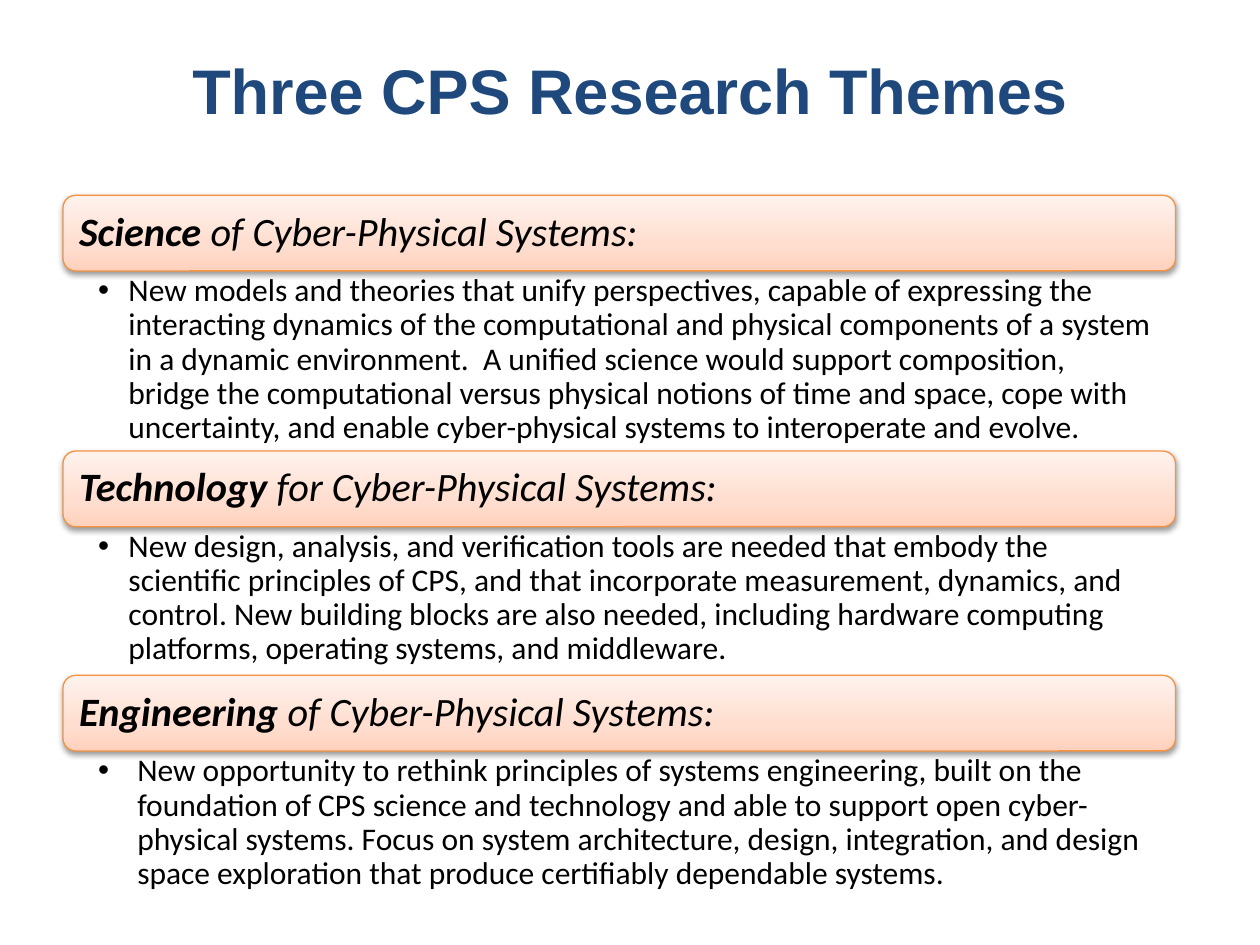
from lxml import etree
from pptx import Presentation
from pptx import util as u
from pptx.dml.color import RGBColor
from pptx.enum import shapes, text
from pptx.oxml.ns import qn

COLORS = {
    "title": "1F497D",
    "text": "000000",
    "border": "F69240",
    "shadow": "000000",
    "deep": "FFD2BD",
    "middle": "FFDED0",
    "pale": "FFF2ED",
}
GRADIENT = [(0, "deep"), (35, "middle"), (100, "pale")]
THEMES = [
    ("Science", " of Cyber-Physical Systems:", 19.07, 0.24,
     "New models and theories that unify perspectives, capable of expressing the "
     "interacting dynamics of the computational and physical components of a system "
     "in a dynamic environment.  A unified science would support composition, "
     "bridge the computational versus physical notions of time and space, cope with "
     "uncertainty, and enable cyber-physical systems to interoperate and evolve."),
    ("Technology", " for Cyber-Physical Systems:", 15.73, 0.24,
     "New design, analysis, and verification tools are needed that embody the "
     "scientific principles of CPS, and that incorporate measurement, dynamics, and "
     "control. New building blocks are also needed, including hardware computing "
     "platforms, operating systems, and middleware."),
    ("Engineering ", "of Cyber-Physical Systems:", 15.73, 0.31,
     "New opportunity to rethink principles of systems engineering, built on the "
     "foundation of CPS science and technology and able to support open "
     "cyber-physical systems. Focus on system architecture, design, integration, and "
     "design space exploration that produce certifiably dependable systems."),
]


def add_color(parent, name, alpha=None):
    color = etree.SubElement(parent, qn("a:srgbClr"), val=COLORS[name])
    if alpha:
        etree.SubElement(color, qn("a:alpha"), val=str(alpha * 1000))


def format_run(run, size, name, color, bold=False, italic=False):
    run.font.size = u.Pt(size)
    run.font.name = name
    run.font.color.rgb = RGBColor.from_string(COLORS[color])
    run.font.bold = bold
    run.font.italic = italic


presentation = Presentation()
presentation.slide_width = u.Inches(10)
presentation.slide_height = u.Inches(7.5)
column = presentation.slide_width / 100
row = presentation.slide_height / 100
slide = presentation.slides.add_slide(presentation.slide_layouts[5])

title = slide.shapes.title
title.left, title.top = int(5 * column), int(1.07 * row)
title.width, title.height = int(90 * column), int(16.67 * row)
title.text_frame.text = "Three CPS Research Themes"
title.text_frame.vertical_anchor = text.MSO_ANCHOR.MIDDLE
paragraph = title.text_frame.paragraphs[0]
paragraph.alignment = text.PP_ALIGN.CENTER
format_run(paragraph.runs[0], 36, "Arial", "title", bold=True)

left, width = int(5 * column), int(88.3 * column)
band_rows = 8
top = 20.67
for keyword, subject, detail_rows, indent, detail in THEMES:
    band = slide.shapes.add_shape(
        shapes.MSO_SHAPE.ROUNDED_RECTANGLE, left, int(top * row), width, int(band_rows * row))
    band.fill.gradient()
    band.fill.gradient_angle = 90
    properties = band._element.spPr
    stops = properties.find(".//" + qn("a:gsLst"))
    for stop in list(stops):
        stops.remove(stop)
    for position, name in GRADIENT:
        add_color(etree.SubElement(stops, qn("a:gs"), pos=str(position * 1000)), name)
    band.line.color.rgb = RGBColor.from_string(COLORS["border"])
    band.line.width = u.Pt(0.75)
    band.shadow.inherit = False
    shadow = etree.SubElement(
        properties.find(qn("a:effectLst")), qn("a:outerShdw"), blurRad=str(u.Pt(3.1)),
        dist=str(u.Pt(1.6)), dir="5400000", rotWithShape="0")
    add_color(shadow, "shadow", 38)

    frame = band.text_frame
    frame.word_wrap = True
    frame.vertical_anchor = text.MSO_ANCHOR.MIDDLE
    frame.margin_left = frame.margin_right = u.Inches(0.1)
    paragraph = frame.paragraphs[0]
    paragraph.alignment = text.PP_ALIGN.LEFT
    paragraph.line_spacing = 0.9
    for words, bold in ((keyword, True), (subject, False)):
        run = paragraph.add_run()
        run.text = words
        format_run(run, 23, "Calibri", "text", bold=bold, italic=True)
    top += band_rows

    box = slide.shapes.add_textbox(left, int(top * row), width, int(detail_rows * row))
    frame = box.text_frame
    frame.word_wrap = True
    frame.margin_left, frame.margin_right = u.Inches(0.28), u.Inches(0.18)
    frame.margin_top = frame.margin_bottom = u.Inches(0.03)
    frame.text = detail
    paragraph = frame.paragraphs[0]
    paragraph.line_spacing = 0.9
    paragraph_properties = paragraph._p.get_or_add_pPr()
    paragraph_properties.set("marL", str(u.Inches(indent)))
    paragraph_properties.set("indent", str(-u.Inches(indent)))
    etree.SubElement(paragraph_properties, qn("a:buFont"), typeface="Arial")
    etree.SubElement(paragraph_properties, qn("a:buChar"), char="•")
    format_run(paragraph.runs[0], 18, "Calibri", "text")
    top += detail_rows

presentation.save("out.pptx")
